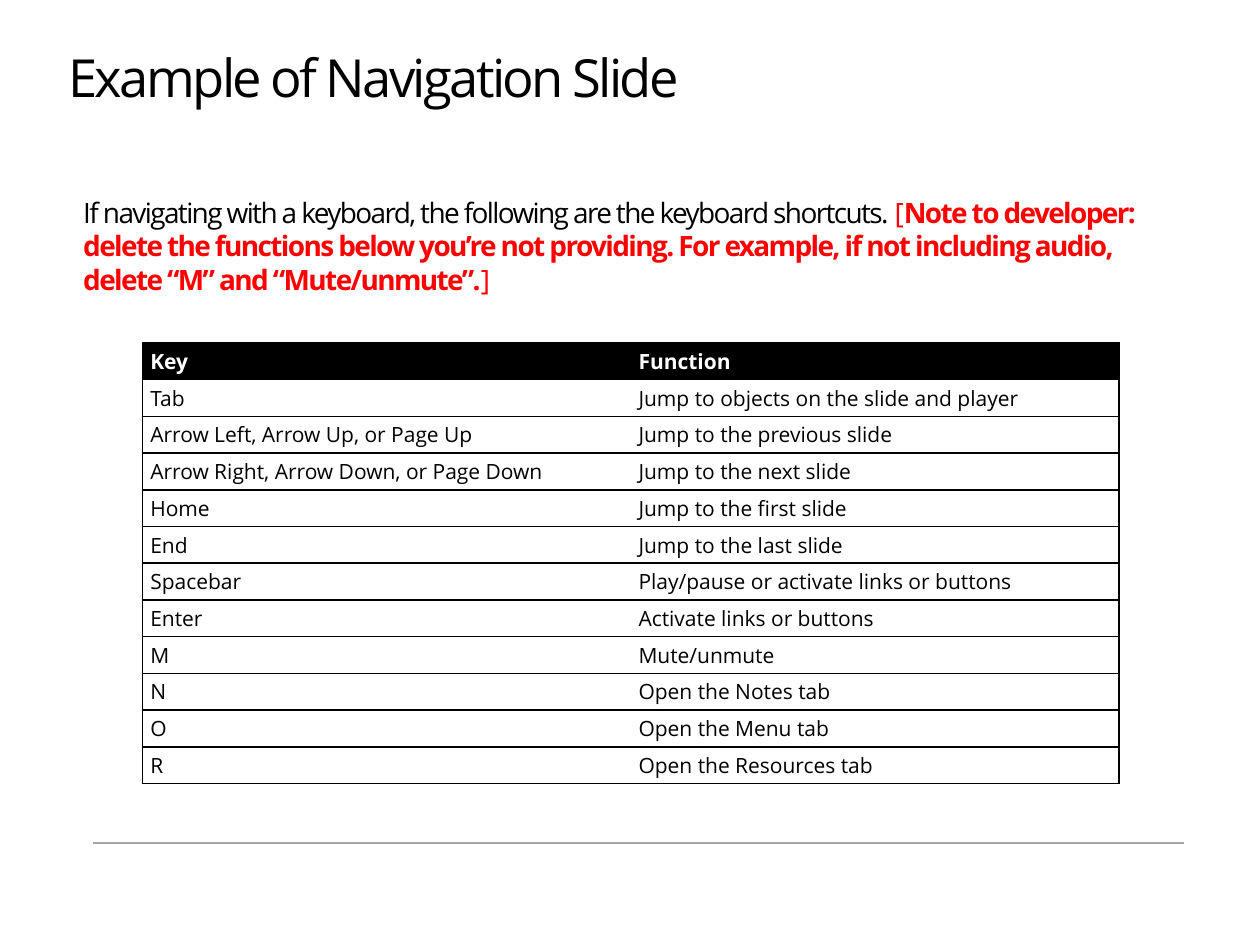
from dataclasses import dataclass
from typing import NamedTuple

from lxml import etree
from pptx import Presentation
from pptx.dml.color import RGBColor
from pptx.enum import shapes
from pptx.oxml import ns
from pptx.util import Pt


@dataclass(frozen=True)
class Theme:
    font: str = "Open Sans"
    black: RGBColor = RGBColor(0, 0, 0)
    white: RGBColor = RGBColor(255, 255, 255)
    note: RGBColor = RGBColor(255, 0, 0)
    rule: RGBColor = RGBColor(0xA6, 0xA6, 0xA6)
    title_size: float = 30
    body_size: float = 16
    table_size: float = 12
    border: float = 1


class Box(NamedTuple):
    left: float
    top: float
    width: float
    height: float


class Run(NamedTuple):
    text: str
    color: RGBColor
    bold: bool = False


class Shortcut(NamedTuple):
    key: str
    function: str


THEME = Theme()
HEADER = Shortcut("Key", "Function")
SHORTCUTS = [
    Shortcut("Tab", "Jump to objects on the slide and player"),
    Shortcut("Arrow Left, Arrow Up, or Page Up", "Jump to the previous slide"),
    Shortcut("Arrow Right, Arrow Down, or Page Down", "Jump to the next slide"),
    Shortcut("Home", "Jump to the first slide"),
    Shortcut("End", "Jump to the last slide"),
    Shortcut("Spacebar", "Play/pause or activate links or buttons"),
    Shortcut("Enter", "Activate links or buttons"),
    Shortcut("M", "Mute/unmute"),
    Shortcut("N", "Open the Notes tab"),
    Shortcut("O", "Open the Menu tab"),
    Shortcut("R", "Open the Resources tab"),
]
INTRODUCTION = [
    Run("If navigating with a keyboard, the following are the keyboard shortcuts.", THEME.black),
    Run(" [", THEME.note),
    Run("Note to developer: delete the functions below you’re not providing. "
        "For example, if not including audio, delete “M” and “Mute/unmute”.", THEME.note, True),
    Run("]", THEME.note),
]


def add_text(slide, box: Box, runs: list[Run], size: float, tracking: float,
             line_spacing: float, top_inset: float) -> None:
    """Add one wrapped paragraph; tracking is letter spacing in points."""
    frame = slide.shapes.add_textbox(*map(Pt, box)).text_frame
    frame.word_wrap = True
    frame.margin_top = Pt(top_inset)
    paragraph = frame.paragraphs[0]
    paragraph.line_spacing = line_spacing
    paragraph.font.name, paragraph.font.size = THEME.font, Pt(size)
    for part in runs:
        run = paragraph.add_run()
        run.text = part.text
        run.font.name, run.font.size = THEME.font, Pt(size)
        run.font.bold = part.bold
        run.font.color.rgb = part.color
        run.font._element.set("spc", str(round(tracking * 100)))


def set_borders(cell, visible: str) -> None:
    """Draw the sides named in visible (letters of LRTB) and clear the others."""
    properties = cell._tc.get_or_add_tcPr()
    for side in "LRTB":
        line = etree.SubElement(properties, ns.qn(f"a:ln{side}"), w=str(Pt(THEME.border)))
        if side in visible:
            fill = etree.SubElement(line, ns.qn("a:solidFill"))
            etree.SubElement(fill, ns.qn("a:srgbClr"), val=str(THEME.black))
        else:
            etree.SubElement(line, ns.qn("a:noFill"))


def fill_cell(cell, words: str, is_header: bool, borders: str) -> None:
    set_borders(cell, borders)
    cell.fill.solid()
    cell.fill.fore_color.rgb = THEME.black if is_header else THEME.white
    cell.margin_left = cell.margin_right = Pt(4.5)
    cell.margin_top = cell.margin_bottom = Pt(2.3)
    cell.text = words
    font = cell.text_frame.paragraphs[0].font
    font.name, font.size, font.bold = THEME.font, Pt(THEME.table_size), is_header
    font.color.rgb = THEME.white if is_header else THEME.black


def add_shortcut_table(slide, box: Box) -> None:
    rows = [HEADER, *SHORTCUTS]
    table = slide.shapes.add_table(len(rows), len(HEADER), *map(Pt, box)).table
    table.horz_banding = False
    for row, shortcut in enumerate(rows):
        for column, words in enumerate(shortcut):
            fill_cell(table.cell(row, column), words, row == 0, ("LTB", "RTB")[column])


def add_rule(slide, left: float, right: float, y: float) -> None:
    rule = slide.shapes.add_connector(
        shapes.MSO_CONNECTOR.STRAIGHT, Pt(left), Pt(y), Pt(right), Pt(y))
    rule.line.color.rgb = THEME.rule
    rule.line.width = Pt(1.5)
    etree.SubElement(rule._element.spPr, ns.qn("a:effectLst"))


def main() -> None:
    deck = Presentation()
    deck.slide_width, deck.slide_height = Pt(720), Pt(540)
    slide = deck.slides.add_slide(deck.slide_layouts[6])
    add_rule(slide, 53.3, 676.8, 481.7)
    add_text(slide, Box(32, 28.8, 657, 53), [Run("Example of Navigation Slide", THEME.black)],
             THEME.title_size, tracking=-1.5, line_spacing=0.9, top_inset=1)
    add_text(slide, Box(40.5, 106.6, 648, 345), INTRODUCTION,
             THEME.body_size, tracking=-0.9, line_spacing=1.0, top_inset=5)
    row_height = 21
    add_shortcut_table(slide, Box(81.4, 196, 558, row_height * (len(SHORTCUTS) + 1)))
    deck.save("out.pptx")


if __name__ == "__main__":
    main()
